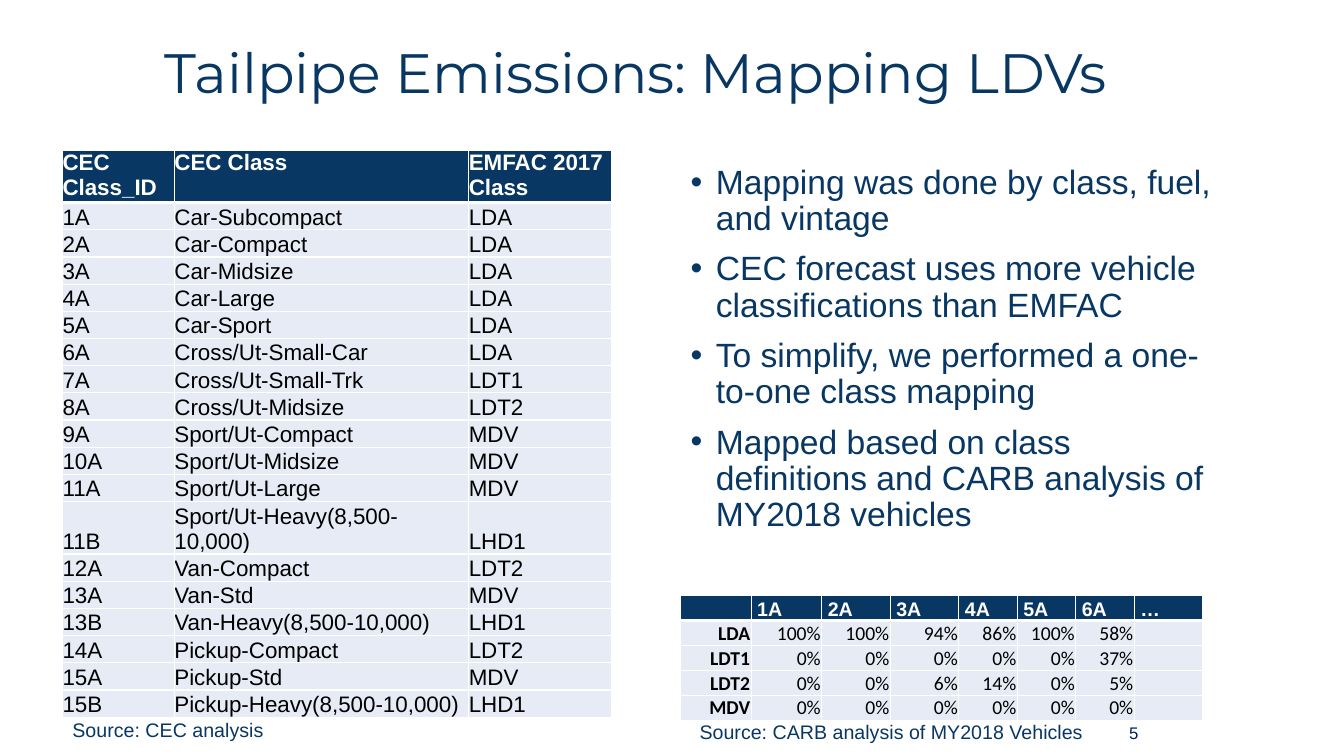
from lxml import etree
from pptx import Presentation
from pptx.dml.color import RGBColor
from pptx.enum.text import MSO_ANCHOR, MSO_AUTO_SIZE, PP_ALIGN
from pptx.oxml.ns import qn
from pptx.util import Pt

TOP, MIDDLE, BOTTOM = MSO_ANCHOR.TOP, MSO_ANCHOR.MIDDLE, MSO_ANCHOR.BOTTOM
LEFT, RIGHT = PP_ALIGN.LEFT, PP_ALIGN.RIGHT
NO_AUTOFIT = MSO_AUTO_SIZE.NONE
EMU_PER_PX = 9144
NAVY, DEEP_BLUE, PALE, WHITE, BLACK = "083763", "002060", "E7EBF5", "FFFFFF", "000000"


def px(*lengths):
    return [length * EMU_PER_PX for length in lengths]


def format_font(font, color, **values):
    for name, value in values.items():
        setattr(font, name, value)
    font.color.rgb = RGBColor.from_string(color)


prs = Presentation()
prs.slide_width, prs.slide_height = px(1333, 750)
slide = prs.slides.add_slide(prs.slide_layouts[1])

title = slide.shapes.title
title.left, title.top, title.width, title.height = px(153, 18, 1089, 114)
title.text_frame.text = "Tailpipe Emissions: Mapping LDVs"
title.text_frame.auto_size = NO_AUTOFIT
title.text_frame.vertical_anchor = MIDDLE
heading = title.text_frame.paragraphs[0]
heading.alignment = LEFT
heading.line_spacing = 0.9
format_font(heading.runs[0].font, NAVY, name="Montserrat", size=Pt(39.6))

points = [
    "Mapping was done by class, fuel, and vintage",
    "CEC forecast uses more vehicle classifications than EMFAC",
    "To simplify, we performed a one-to-one class mapping",
    "Mapped based on class definitions and CARB analysis of MY2018 vehicles",
]
body = slide.placeholders[1]
body.left, body.top, body.width, body.height = px(675, 159, 544, 428)
body.text_frame.text = "\n".join(points)
body.text_frame.auto_size = NO_AUTOFIT
for index, point in enumerate(body.text_frame.paragraphs):
    properties = point._p.get_or_add_pPr()
    indent = px(25)[0]
    properties.set("marL", str(indent))
    properties.set("indent", str(-indent))
    etree.SubElement(properties, qn("a:buChar")).set("char", "•")
    point.line_spacing = 0.9
    point.space_before = Pt(10 if index else 0)
    format_font(point.runs[0].font, NAVY, name="Arial", size=Pt(24))

class_rows = [
    ("CEC Class_ID", "CEC Class", "EMFAC 2017 Class"),
    ("1A", "Car-Subcompact", "LDA"),
    ("2A", "Car-Compact", "LDA"),
    ("3A", "Car-Midsize", "LDA"),
    ("4A", "Car-Large", "LDA"),
    ("5A", "Car-Sport", "LDA"),
    ("6A", "Cross/Ut-Small-Car", "LDA"),
    ("7A", "Cross/Ut-Small-Trk", "LDT1"),
    ("8A", "Cross/Ut-Midsize", "LDT2"),
    ("9A", "Sport/Ut-Compact", "MDV"),
    ("10A", "Sport/Ut-Midsize", "MDV"),
    ("11A", "Sport/Ut-Large", "MDV"),
    ("11B", "Sport/Ut-Heavy(8,500-10,000)", "LHD1"),
    ("12A", "Van-Compact", "LDT2"),
    ("13A", "Van-Std", "MDV"),
    ("13B", "Van-Heavy(8,500-10,000)", "LHD1"),
    ("14A", "Pickup-Compact", "LDT2"),
    ("15A", "Pickup-Std", "MDV"),
    ("15B", "Pickup-Heavy(8,500-10,000)", "LHD1"),
]
share_rows = [
    ("", "1A", "2A", "3A", "4A", "5A", "6A", "…"),
    ("LDA", "100%", "100%", "94%", "86%", "100%", "58%", ""),
    ("LDT1", "0%", "0%", "0%", "0%", "0%", "37%", ""),
    ("LDT2", "0%", "0%", "6%", "14%", "0%", "5%", ""),
    ("MDV", "0%", "0%", "0%", "0%", "0%", "0%", ""),
]
class_heights = [52 if row[0] in ("CEC Class_ID", "11B") else 27 for row in class_rows]
class_format = dict(size=16, face="Arial", align=LEFT, head_anchor=TOP, inset=0,
                    head_inset=0, bold_labels=False)
share_format = dict(size=14, face="Calibri", align=RIGHT, head_anchor=BOTTOM, inset=1,
                    head_inset=6, bold_labels=True)
tables = [
    (62, 149, (111, 292, 142), class_heights, class_rows, class_format),
    (675, 591, (70, 70, 68, 68, 58, 58, 58, 68), [24] * 5, share_rows, share_format),
]
for left, top, widths, heights, rows, look in tables:
    place = px(left, top, sum(widths), sum(heights))
    table = slide.shapes.add_table(len(rows), len(widths), *place).table
    table.horz_banding = False
    for column, width in zip(table.columns, px(*widths)):
        column.width = width
    for r, (row, height) in enumerate(zip(rows, px(*heights))):
        table.rows[r].height = height
        header = r == 0
        for c, text in enumerate(row):
            cell = table.cell(r, c)
            edges = {"L": 1, "R": 1, "T": 3 if r == 1 else 1, "B": 3 if header else 1}
            for side, weight in edges.items():
                line = etree.SubElement(cell._tc.get_or_add_tcPr(), qn(f"a:ln{side}"))
                line.set("w", str(Pt(weight)))
                paint = etree.SubElement(line, qn("a:solidFill"))
                etree.SubElement(paint, qn("a:srgbClr")).set("val", WHITE)
            cell.fill.solid()
            cell.fill.fore_color.rgb = RGBColor.from_string(NAVY if header else PALE)
            inset, side_inset = px(look["inset"], look["head_inset"] if header else look["inset"])
            margins = dict(margin_left=side_inset, margin_right=inset, margin_top=inset,
                           margin_bottom=0,
                           vertical_anchor=look["head_anchor"] if header else BOTTOM)
            for name, value in margins.items():
                setattr(cell, name, value)
            entry = cell.text_frame.paragraphs[0]
            entry.alignment = LEFT if header else look["align"]
            if text:
                run = entry.add_run()
                run.text = text
                format_font(run.font, WHITE if header else BLACK, size=Pt(look["size"]),
                            name="Arial" if header else look["face"],
                            bold=header or (look["bold_labels"] and c == 0))
            else:
                etree.SubElement(entry._p, qn("a:endParaRPr")).set("sz", str(look["size"] * 100))

captions = [
    ("Source: CEC analysis", (62, 707, 313, 34), 14, NAVY, LEFT, TOP),
    ("Source: CARB analysis of MY2018 Vehicles", (684, 709, 474, 34), 14, NAVY, LEFT, TOP),
    ("5", (942, 707, 197, 40), 12, DEEP_BLUE, RIGHT, MIDDLE),
]
for text, place, size, color, align, anchor in captions:
    caption = slide.shapes.add_textbox(*px(*place)).text_frame
    caption.word_wrap = True
    caption.vertical_anchor = anchor
    caption.text = text
    caption.paragraphs[0].alignment = align
    format_font(caption.paragraphs[0].runs[0].font, color, name="Arial", size=Pt(size))

prs.save("out.pptx")
